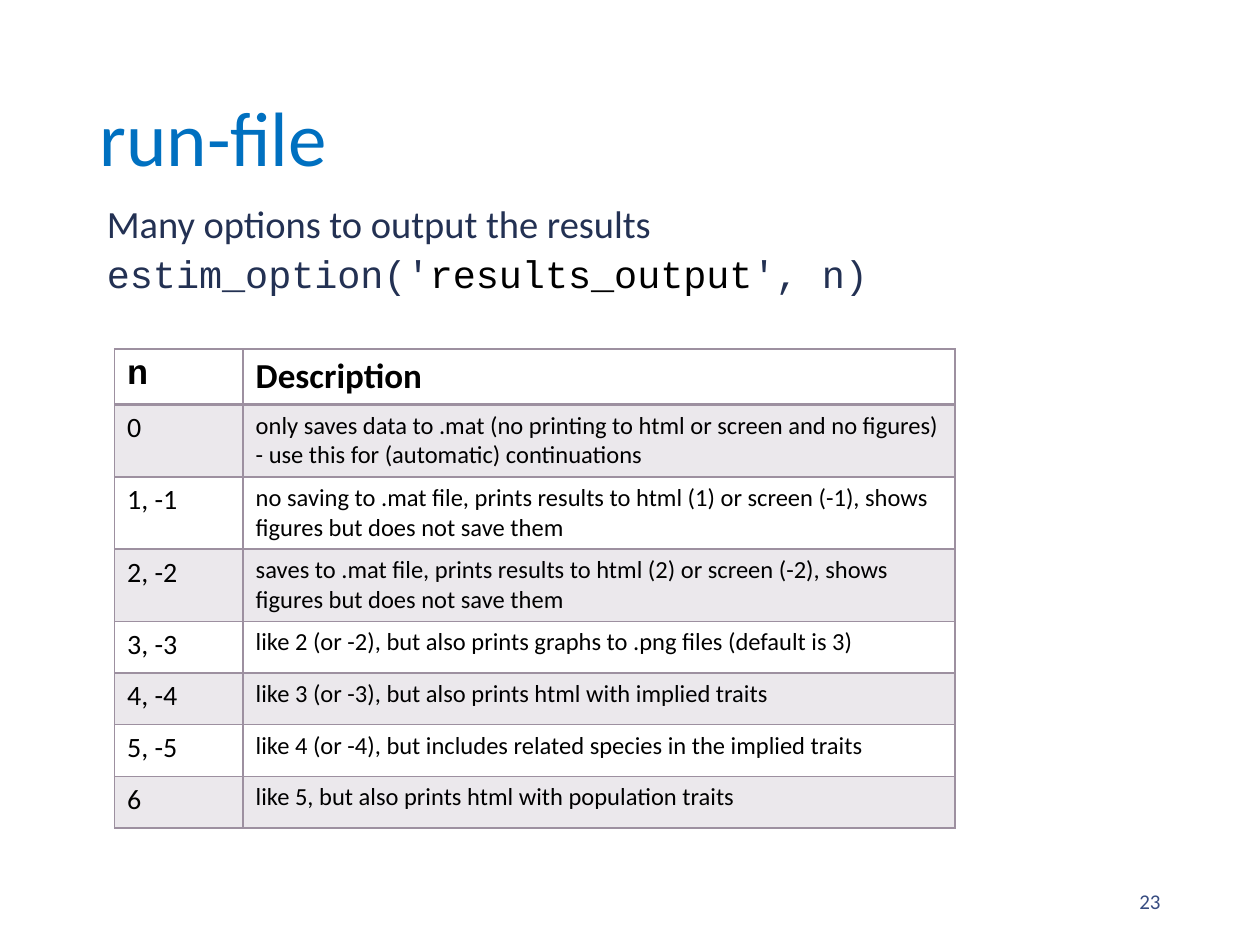
import pptx
import pptx.dml.color
import pptx.enum.text
import pptx.oxml
import pptx.oxml.ns
import pptx.util
from pptx.util import Inches

NAVY, BLACK, MAUVE = "233153", "000000", "9D90A0"
ALIGN = pptx.enum.text.PP_ALIGN
ANCHOR = pptx.enum.text.MSO_ANCHOR

OPTIONS = [
    ("0", "only saves data to .mat (no printing to html or screen and no figures) "
          "- use this for (automatic) continuations"),
    ("1, -1", "no saving to .mat file, prints results to html (1) or screen (-1), "
              "shows figures but does not save them"),
    ("2, -2", "saves to .mat file, prints results to html (2) or screen (-2), "
              "shows figures but does not save them"),
    ("3, -3", "like 2 (or -2), but also prints graphs to .png files (default is 3)"),
    ("4, -4", "like 3 (or -3), but also prints html with implied traits"),
    ("5, -5", "like 4 (or -4), but includes related species in the implied traits"),
    ("6", "like 5, but also prints html with population traits"),
]


def rgb(color):
    return pptx.dml.color.RGBColor.from_string(color)


def add_run(p, text, size, color, name="Calibri", bold=False):
    r = p.add_run()
    r.text = text
    r.font.color.rgb = rgb(color)
    formats = {"size": pptx.util.Pt(size), "name": name, "bold": bold}
    for key, value in formats.items():
        setattr(r.font, key, value)


def set_frame(tf, anchor):
    formats = {"word_wrap": True, "vertical_anchor": anchor,
               "auto_size": pptx.enum.text.MSO_AUTO_SIZE.NONE,
               "margin_left": Inches(0.1), "margin_right": Inches(0.1),
               "margin_top": Inches(0.05), "margin_bottom": Inches(0.05)}
    for key, value in formats.items():
        setattr(tf, key, value)


def add_title(s, left, top, width, height):
    sp = s.shapes.title
    sp.left, sp.top, sp.width, sp.height = left, top, width, height
    set_frame(sp.text_frame, ANCHOR.MIDDLE)
    p = sp.text_frame.paragraphs[0]
    p.alignment = ALIGN.LEFT
    p.line_spacing = 0.9
    add_run(p, "run-file", 44, "0070C0")


def add_intro(s, left, top, width, height):
    tf = s.shapes.add_textbox(left, top, width, height).text_frame
    set_frame(tf, ANCHOR.TOP)
    lines = [
        [("Many options to output the results", NAVY, "Calibri")],
        [("estim_option('", NAVY, "Courier New"),
         ("results_output", BLACK, "Courier New"),
         ("', n)", NAVY, "Courier New")],
    ]
    for i, line in enumerate(lines):
        p = tf.add_paragraph() if i else tf.paragraphs[0]
        pPr = p._p.get_or_add_pPr()
        pPr.set("marL", str(Inches(0.5)))
        pPr.set("indent", str(Inches(-0.44)))
        p.line_spacing = 0.7
        p.space_before = pptx.util.Pt(10 if i else 0)
        for text, color, name in line:
            add_run(p, text, 22, color, name)


def set_borders(cell, bottom):
    tcPr = cell._tc.get_or_add_tcPr()
    widths = {"lnL": 1, "lnR": 1, "lnT": 1, "lnB": bottom}
    for i, (tag, width) in enumerate(widths.items()):
        tcPr.insert(i, pptx.oxml.parse_xml(
            f'<a:{tag} {pptx.oxml.ns.nsdecls("a")} w="{pptx.util.Pt(width)}">'
            f'<a:solidFill><a:srgbClr val="{MAUVE}"/></a:solidFill></a:{tag}>'))


def set_fill(cell, shaded):
    if not shaded:
        cell.fill.background()
        return
    cell.fill.solid()
    cell.fill.fore_color.rgb = rgb(MAUVE)
    clr = cell._tc.tcPr.find(".//" + pptx.oxml.ns.qn("a:solidFill") + "/")
    clr.append(pptx.oxml.parse_xml(
        f'<a:alpha {pptx.oxml.ns.nsdecls("a")} val="20000"/>'))


def add_options_table(s, left, top, width, height):
    rows = [("n", "Description")] + OPTIONS
    table = s.shapes.add_table(len(rows), 2, left, top, width, height).table
    table.columns[0].width = Inches(1.02)
    table.columns[1].width = width - Inches(1.02)
    for i, row in enumerate(rows):
        header = i == 0
        table.rows[i].height = Inches(0.41)
        for j, text in enumerate(row):
            cell = table.cell(i, j)
            size = 20 if header else (16, 14)[j]
            name = "Courier New" if header and j == 0 else "Calibri"
            add_run(cell.text_frame.paragraphs[0], text, size, BLACK, name, header)
            set_fill(cell, i % 2 == 1)
            set_borders(cell, 2 if header else 1)


def add_page_number(s, left, top, width, height):
    tf = s.shapes.add_textbox(left, top, width, height).text_frame
    set_frame(tf, ANCHOR.MIDDLE)
    p = tf.paragraphs[0]
    p.alignment = ALIGN.RIGHT
    add_run(p, "23", 12, "374C81")


def main():
    prs = pptx.Presentation()
    prs.slide_width, prs.slide_height = Inches(10), Inches(7.5)
    s = prs.slides.add_slide(prs.slide_layouts[5])
    # Heading and introduction
    add_title(s, Inches(0.69), Inches(0.4), Inches(8.62), Inches(1.45))
    add_intro(s, Inches(0.69), Inches(1.64), Inches(8.21), Inches(1.45))
    # Page number and table of output options
    add_page_number(s, Inches(7.06), Inches(6.95), Inches(2.25), Inches(0.4))
    add_options_table(s, Inches(0.91), Inches(2.77), Inches(6.67), Inches(3.28))
    prs.save("out.pptx")


if __name__ == "__main__":
    main()
